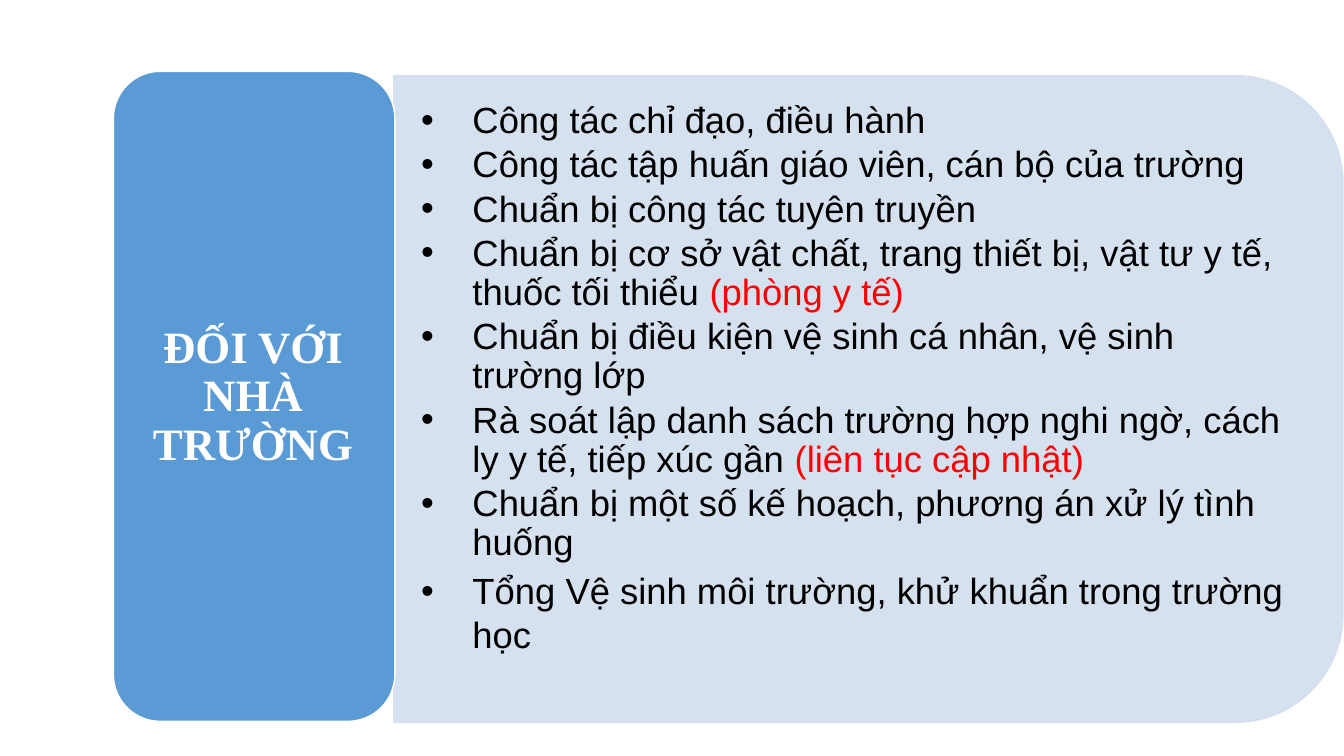
from dataclasses import dataclass

from lxml import etree
from pptx import Presentation
from pptx.dml.color import RGBColor
from pptx.enum.shapes import MSO_SHAPE
from pptx.enum.text import MSO_ANCHOR, MSO_AUTO_SIZE, PP_ALIGN
from pptx.oxml.ns import qn
from pptx.util import Emu, Pt


@dataclass(frozen=True)
class Theme:
    panel: RGBColor = RGBColor(0xD2, 0xDE, 0xEF)
    card: RGBColor = RGBColor(0x5B, 0x9B, 0xD5)
    white: RGBColor = RGBColor(0xFF, 0xFF, 0xFF)
    ink: RGBColor = RGBColor(0, 0, 0)
    accent: RGBColor = RGBColor(0xFF, 0, 0)
    title_font: str = "Times New Roman"
    body_font: str = "Arial"
    title_size: int = 32
    body_size: int = 26
    tight: float = 0.9


THEME = Theme()
EMU_PER_PX = 9525
INDENT = 49

TITLE = "ĐỐI VỚI NHÀ TRƯỜNG"
TASKS = [
    ("Công tác chỉ đạo, điều hành", ""),
    ("Công tác tập huấn giáo viên, cán bộ của trường", ""),
    ("Chuẩn bị công tác tuyên truyền", ""),
    ("Chuẩn bị cơ sở vật chất, trang thiết bị, vật tư y tế, thuốc tối thiểu ",
     "(phòng y tế)"),
    ("Chuẩn bị điều kiện vệ sinh cá nhân, vệ sinh trường lớp", ""),
    ("Rà soát lập danh sách trường hợp nghi ngờ, cách ly y tế, tiếp xúc gần ",
     "(liên tục cập nhật)"),
    ("Chuẩn bị một số kế hoạch, phương án xử lý tình huống", ""),
    ("Tổng Vệ sinh môi trường, khử khuẩn trong trường học", ""),
]


def px(n):
    return Emu(n * EMU_PER_PX)


def set_alpha(sp, percent):
    for clr in sp._element.spPr.iter(qn("a:srgbClr")):
        etree.SubElement(clr, qn("a:alpha"), val=str(percent * 1000))


def add_block(s, kind, box, fill, line):
    sp = s.shapes.add_shape(kind, *map(px, box))
    sp.shadow.inherit = False
    sp.fill.solid()
    sp.fill.fore_color.rgb = fill
    sp.line.color.rgb = line
    sp.line.width = Pt(1)
    return sp


def set_frame(tf, left, top, right, bottom):
    tf.word_wrap = True
    tf.auto_size = MSO_AUTO_SIZE.NONE
    tf.vertical_anchor = MSO_ANCHOR.MIDDLE
    tf.margin_left, tf.margin_top = px(left), px(top)
    tf.margin_right, tf.margin_bottom = px(right), px(bottom)


def style_run(r, font, size, color, bold=False):
    r.font.name = font
    r.font.size = Pt(size)
    r.font.color.rgb = color
    r.font.bold = bold


def set_title(s, text, box):
    sp = s.shapes.title
    sp.left, sp.top, sp.width, sp.height = map(px, box)
    tf = sp.text_frame
    tf.text = text
    set_frame(tf, 12, 7, 12, 7)
    p = tf.paragraphs[0]
    p.alignment = PP_ALIGN.CENTER
    p.line_spacing = THEME.tight
    style_run(p.runs[0], THEME.title_font, THEME.title_size, THEME.white, True)
    s.shapes._spTree.append(sp._element)


def add_bullet(p):
    pPr = p._p.get_or_add_pPr()
    pPr.set("marL", str(px(INDENT)))
    pPr.set("indent", str(-px(INDENT)))
    etree.SubElement(pPr, qn("a:buFont"), typeface=THEME.body_font)
    etree.SubElement(pPr, qn("a:buChar"), char="•")


def add_tasks(s, tasks, box):
    tf = s.shapes.add_textbox(*map(px, box)).text_frame
    set_frame(tf, 26, 13, 26, 51)
    for i, (task, note) in enumerate(tasks):
        p = tf.add_paragraph() if i else tf.paragraphs[0]
        last = i == len(tasks) - 1
        p.line_spacing = 1.0 if last else THEME.tight
        p.space_after = Pt(0 if last else 3.5)
        add_bullet(p)
        for text, color in ((task, THEME.ink), (note, THEME.accent)):
            if text:
                r = p.add_run()
                r.text = text
                style_run(r, THEME.body_font, THEME.body_size, color)


def main():
    prs = Presentation()
    prs.slide_width, prs.slide_height = px(1280), px(720)
    s = prs.slides.add_slide(prs.slide_layouts[5])
    panel = add_block(s, MSO_SHAPE.ROUND_2_SAME_RECTANGLE,
                      (519, -72, 616, 904), THEME.panel, THEME.panel)
    panel.rotation = 90
    set_alpha(panel, 90)
    add_tasks(s, TASKS, (375, 102, 875, 556))
    add_block(s, MSO_SHAPE.ROUNDED_RECTANGLE,
              (108, 68, 268, 619), THEME.card, THEME.white)
    set_title(s, TITLE, (120, 82, 242, 593))
    prs.save("out.pptx")


if __name__ == "__main__":
    main()
